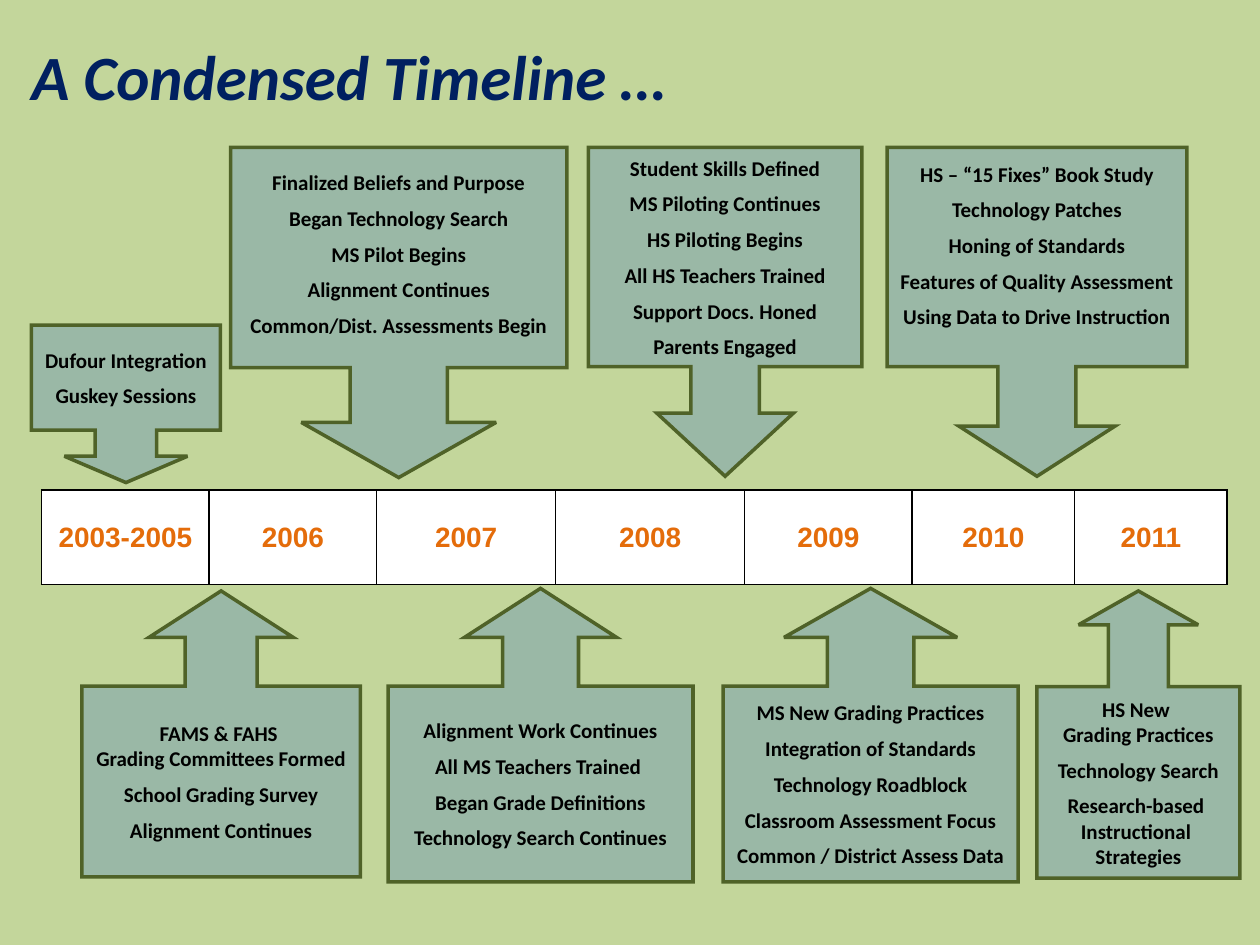
"""Build a timeline slide with callouts above and below a row of years."""
from dataclasses import dataclass

from lxml import etree
from pptx import Presentation
from pptx.dml.color import RGBColor
from pptx.enum.shapes import MSO_SHAPE
from pptx.enum.text import MSO_ANCHOR, MSO_AUTO_SIZE, PP_ALIGN
from pptx.oxml.ns import qn
from pptx.util import Inches, Pt

DOWN = MSO_SHAPE.DOWN_ARROW_CALLOUT
UP = MSO_SHAPE.UP_ARROW_CALLOUT
MIDDLE = MSO_ANCHOR.MIDDLE
CENTER = PP_ALIGN.CENTER
GROW = MSO_AUTO_SIZE.SHAPE_TO_FIT_TEXT

NOTE = {"name": "Calibri", "size": Pt(12), "bold": True}
YEAR = {"name": "Arial", "size": Pt(16), "bold": True}
TITLE = {"name": "Calibri", "size": Pt(36), "bold": True, "italic": True}
YEARS = {"2003-2005": 1.33, "2006": 1.33, "2007": 1.42, "2008": 1.5,
         "2009": 1.33, "2010": 1.29, "2011": 1.21}


@dataclass
class Callout:
    """An arrow callout; a newline in an item starts a tight line."""
    kind: MSO_SHAPE
    box: tuple[float, float, float, float]
    neck: float
    items: tuple[str, ...]
    head: float = 0.167
    foot: float = 0.05


CALLOUTS = (
    Callout(DOWN, (1.83, 1.17, 2.67, 2.62), 0.295, (
        "Finalized Beliefs and Purpose", "Began Technology Search",
        "MS Pilot Begins", "Alignment Continues",
        "Common/Dist. Assessments Begin"), foot=0.11),
    Callout(UP, (3.08, 4.67, 2.42, 2.33), 0.259, (
        "Alignment Work Continues", "All MS Teachers Trained ",
        "Began Grade Definitions", "Technology Search Continues")),
    Callout(DOWN, (4.67, 1.17, 2.17, 2.61), 0.25, (
        "Student Skills Defined", "MS Piloting Continues",
        "HS Piloting Begins", "All HS Teachers Trained",
        "Support Docs. Honed", "Parents Engaged"), head=0.231),
    Callout(DOWN, (0.25, 2.58, 1.5, 1.25), 0.391, (
        "Dufour Integration", "Guskey Sessions")),
    Callout(UP, (0.65, 4.69, 2.21, 2.27), 0.259, (
        "FAMS & FAHS \nGrading Committees Formed",
        "School Grading Survey", "Alignment Continues")),
    Callout(UP, (5.74, 4.67, 2.34, 2.33), 0.295, (
        "MS New Grading Practices", "Integration of Standards",
        "Technology Roadblock", "Classroom Assessment Focus",
        "Common / District Assess Data")),
    Callout(DOWN, (7.04, 1.17, 2.38, 2.61), 0.26, (
        "HS – “15 Fixes” Book Study", "Technology Patches",
        "Honing of Standards", "Features of Quality Assessment",
        "Using Data to Drive Instruction"), foot=0.24),
    Callout(UP, (8.23, 4.69, 1.61, 2.28), 0.295, (
        "HS New \nGrading Practices", "Technology Search",
        "Research-based \nInstructional \nStrategies")),
)


def paint(fill, color: str) -> None:
    """Set a solid fill from a hex string."""
    fill.solid()
    fill.fore_color.rgb = RGBColor.from_string(color)


def write(para, text: str, style: dict, color: str) -> None:
    """Add one styled run to a paragraph."""
    run = para.add_run()
    run.text = text
    for key, value in style.items():
        setattr(run.font, key, value)
    paint(run.font.fill, color)


def draw_callout(slide, spec: Callout) -> None:
    """Draw a translucent callout with its list of notes."""
    shape = slide.shapes.add_shape(spec.kind, *map(Inches, spec.box))
    shape.shadow.inherit = False
    for index, value in enumerate((spec.neck, spec.neck, spec.head, 0.667)):
        shape.adjustments[index] = value
    paint(shape.fill, "4F81BD")
    tint = shape.element.spPr.find(qn("a:solidFill"))[0]
    etree.SubElement(tint, qn("a:alpha"), val="35000")
    paint(shape.line.fill, "4F6228")
    shape.line.width = Pt(2)
    edge = shape.element.spPr.find(qn("a:ln"))
    etree.SubElement(edge, qn("a:miter"), lim="800000")
    frame = shape.text_frame
    frame.word_wrap = False
    frame.vertical_anchor = MIDDLE
    frame.margin_bottom = Inches(spec.foot)
    lines = [(text, 0 if row else 6) for item in spec.items
             for row, text in enumerate(item.split("\n"))]
    for index, (text, gap) in enumerate(lines):
        para = frame.add_paragraph() if index else frame.paragraphs[0]
        para.alignment = CENTER
        para.space_before = Pt(gap if index else 0)
        write(para, text, NOTE, "000000")


def draw_border(cell) -> None:
    """Give a cell thin black borders on all sides."""
    props = cell._tc.get_or_add_tcPr()
    for index, side in enumerate(("lnL", "lnR", "lnT", "lnB")):
        edge = etree.Element(qn(f"a:{side}"), w=str(Pt(1)))
        fill = etree.SubElement(edge, qn("a:solidFill"))
        etree.SubElement(fill, qn("a:srgbClr"), val="000000")
        props.insert(index, edge)


def draw_years(slide) -> None:
    """Draw the row of years as a table."""
    area = map(Inches, (0.33, 3.89, sum(YEARS.values()), 0.75))
    table = slide.shapes.add_table(1, len(YEARS), *area).table
    table.first_row = table.horz_banding = False
    for index, (year, width) in enumerate(YEARS.items()):
        table.columns[index].width = Inches(width)
        cell = table.cell(0, index)
        paint(cell.fill, "FFFFFF")
        draw_border(cell)
        cell.vertical_anchor = MIDDLE
        para = cell.text_frame.paragraphs[0]
        para.alignment = CENTER
        write(para, year, YEAR, "E46C0A")


def draw_title(slide) -> None:
    """Draw the slide title."""
    area = map(Inches, (0.15, 0.25, 6.52, 0.71))
    frame = slide.shapes.add_textbox(*area).text_frame
    frame.word_wrap = True
    frame.auto_size = GROW
    write(frame.paragraphs[0], "A Condensed Timeline …", TITLE, "002060")


def main() -> None:
    """Build and save the slide."""
    deck = Presentation()
    deck.slide_width, deck.slide_height = Inches(10), Inches(7.5)
    slide = deck.slides.add_slide(deck.slide_layouts[6])
    paint(slide.background.fill, "C3D69B")
    draw_title(slide)
    draw_years(slide)
    for spec in CALLOUTS:
        draw_callout(slide, spec)
    deck.save("out.pptx")


if __name__ == "__main__":
    main()
